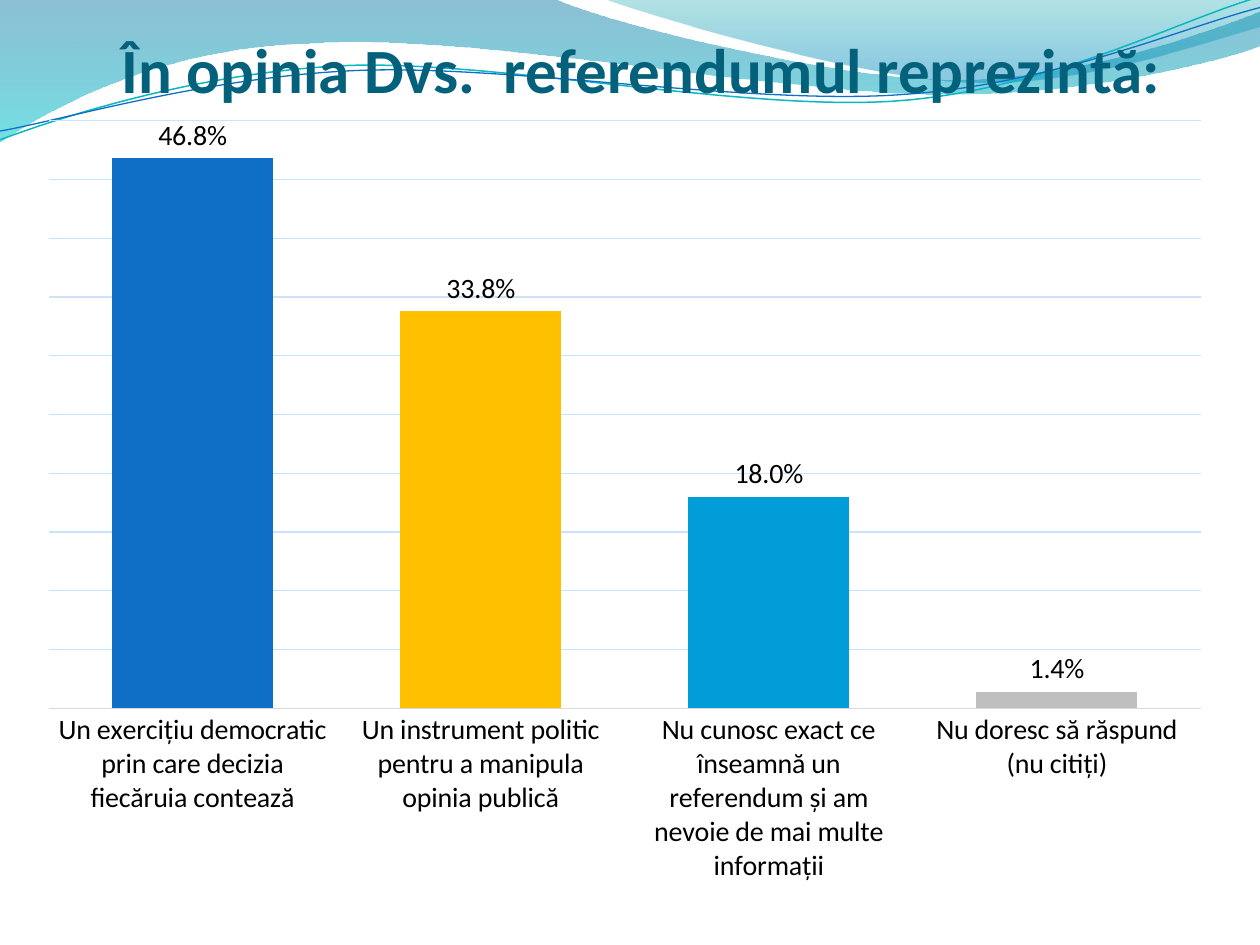
import math

import lxml.etree
import pptx
import pptx.chart.data
import pptx.dml.color
import pptx.enum.chart
import pptx.enum.text
import pptx.oxml.ns
import pptx.util

Pt = pptx.util.Pt
qn = pptx.oxml.ns.qn

# Content
TITLE = "În opinia Dvs.  referendumul reprezintă:"
ANSWERS = [  # category, share, bar colour
    ("Un exercițiu democratic prin care decizia fiecăruia contează", 0.468, "0F6FC6"),
    ("Un instrument politic pentru a manipula opinia publică", 0.338, "FFC000"),
    ("Nu cunosc exact ce înseamnă un referendum și am nevoie de mai multe informații",
     0.18, "009DD9"),
    ("Nu doresc să răspund (nu citiți)", 0.014, "BFBFBF"),
]
TITLE_FONT = {"name": "Calibri", "size": Pt(36), "bold": True}
CHART_FONT = {"name": "Calibri", "size": Pt(16)}
PLOT_AREA = {"x": 0.02, "y": 0.02, "w": 0.96, "h": 0.74}

# Outlines in slide points: one point is a line, three points are a Bezier curve
WAVES = [
    {"box": (-0.7, -0.7, 721.4, 82.1), "start": (0, 0),
     "stops": [(0, "0074A1", 45), (1, "00C6CF", 55)], "segments": [
        [(316.8, -0.7)],
        [(342.7, 12.2), (478.1, 45.4), (545.8, 45.4)],
        [(614.2, 45.4), (689.8, 18.7), (720, 6.5)],
        [(720.7, 25.9)],
        [(707.8, 31.7), (626.4, 54.7), (537.1, 54)],
        [(447.8, 54), (275, 20.2), (185, 24.5)],
        [(92.9, 25.9), (33.1, 59.8), (-0.7, 81.4)],
        [(0, 0)]]},
    {"box": (344.9, -0.7, 375.1, 50.4), "start": (344.9, -0.7),
     "stops": [(0, "00A1A9", 30), (0.8, "008BBF", 45)], "segments": [
        [(366.5, 7.9), (491, 44.6), (553.7, 46.8)],
        [(616.3, 49.7), (691.9, 23), (720, 15.1)],
        [(720, 0)],
        [(344.9, -0.7)]]},
    {"box": (-1.4, 15.8, 721.4, 51.1), "rotation": -2.7, "start": (0, 79.9),
     "line": ("0AB8BF", 0.85), "segments": [
        [(34.6, 67), (113.8, 41), (199.4, 37.4)],
        [(284.4, 34.6), (427, 64.1), (513.4, 57.6)],
        [(599.8, 51.1), (675.4, 10.8), (718.6, -1.4)]]},
    {"box": (-1.4, 21.6, 722.2, 41.8), "rotation": -2.7, "start": (0, 74.9),
     "line": ("0F6FC6", 0.75), "segments": [
        [(33.8, 69.1), (118.1, 43.9), (203.8, 40.3)],
        [(290.2, 36.7), (429.8, 60.5), (516.2, 54)],
        [(601.9, 48.2), (677.5, 15.1), (720, 4.3)]]},
]


def color(value):
    return pptx.dml.color.RGBColor.from_string(value)


def set_values(target, values):
    for name, value in values.items():
        setattr(target, name, value)


def set_font(font, values, value_color):
    set_values(font, values)
    font.color.rgb = color(value_color)


def set_line(line, value_color, width):
    line.color.rgb = color(value_color)
    line.width = Pt(width)


def to_local(point, box, rotation):
    """Place a slide point inside the unrotated box of its shape."""
    left, top, width, height = box
    x, y = point[0] - left - width / 2, point[1] - top - height / 2
    angle = math.radians(-rotation)
    return (Pt(x * math.cos(angle) - y * math.sin(angle) + width / 2),
            Pt(x * math.sin(angle) + y * math.cos(angle) + height / 2))


def draw_outline(shape, wave):
    """Write the lines and Bezier curves of a wave into its freeform."""
    box, rotation = wave["box"], wave.get("rotation", 0)
    set_values(shape, dict(zip(("left", "top", "width", "height"), map(Pt, box))))
    shape.rotation = rotation
    outline = shape._element.find(".//" + qn("a:path"))
    for command in list(outline):
        outline.remove(command)
    outline.set("w", str(shape.width))
    outline.set("h", str(shape.height))
    commands = [("a:moveTo", [wave["start"]])] + [
        ("a:lnTo" if len(segment) == 1 else "a:cubicBezTo", segment)
        for segment in wave["segments"]]
    for tag, points in commands:
        command = lxml.etree.SubElement(outline, qn(tag))
        for point in points:
            x, y = to_local(point, box, rotation)
            lxml.etree.SubElement(command, qn("a:pt"), x=str(x), y=str(y))
    if "stops" in wave:
        lxml.etree.SubElement(outline, qn("a:close"))


def add_wave(slide, wave):
    left, top, width, height = map(Pt, wave["box"])
    builder = slide.shapes.build_freeform(left, top)
    builder.add_line_segments([(left + width, top + height)], close=False)
    shape = builder.convert_to_shape()
    draw_outline(shape, wave)
    shape.shadow.inherit = False
    if "line" in wave:
        shape.fill.background()
        set_line(shape.line, *wave["line"])
        return
    shape.line.fill.background()
    shape.fill.gradient()
    shape.fill.gradient_angle = 270
    for stop, (position, value, _) in zip(shape.fill.gradient_stops, wave["stops"]):
        stop.position = position
        stop.color.rgb = color(value)
    # Opacity of each gradient stop
    stop_colors = shape.fill._xPr.iter(qn("a:srgbClr"))
    for stop_color, (_, _, opacity) in zip(stop_colors, wave["stops"]):
        lxml.etree.SubElement(stop_color, qn("a:alpha"), val=str(opacity * 1000))


def add_title(slide):
    shape = slide.shapes.add_textbox(Pt(42.5), Pt(9.4), Pt(648), Pt(51))
    frame = shape.text_frame
    set_values(frame, {
        "word_wrap": True, "vertical_anchor": pptx.enum.text.MSO_ANCHOR.BOTTOM,
        "margin_left": 0, "margin_right": 0, "margin_top": Pt(3.6), "margin_bottom": 0})
    paragraph = frame.paragraphs[0]
    paragraph.alignment = pptx.enum.text.PP_ALIGN.CENTER
    run = paragraph.add_run()
    run.text = TITLE
    set_font(run.font, TITLE_FONT, "04617B")


def add_answer_chart(slide):
    categories, shares, bar_colors = zip(*ANSWERS)
    data = pptx.chart.data.CategoryChartData(number_format="0.0%")
    data.categories = categories
    data.add_series("Series 1", shares)
    chart = slide.shapes.add_chart(
        pptx.enum.chart.XL_CHART_TYPE.COLUMN_CLUSTERED,
        Pt(14), Pt(60), Pt(686), Pt(453.6), data).chart
    set_values(chart, {"has_title": False, "has_legend": False})
    set_font(chart.font, CHART_FONT, "000000")

    # Bars and labels
    plot = chart.plots[0]
    set_values(plot, {"gap_width": 79, "overlap": -27, "vary_by_categories": False})
    series = plot.series[0]
    set_values(series.data_labels, {
        "show_value": True, "number_format": "0.0%", "number_format_is_linked": False,
        "position": pptx.enum.chart.XL_LABEL_POSITION.OUTSIDE_END})
    set_font(series.data_labels.font, CHART_FONT, "000000")
    bars = [series] + [series.points[index] for index in range(1, len(ANSWERS))]
    for bar, value in zip(bars, bar_colors):
        bar.format.fill.solid()
        bar.format.fill.fore_color.rgb = color(value)

    # Axes
    chart.category_axis.major_tick_mark = pptx.enum.chart.XL_TICK_MARK.NONE
    set_font(chart.category_axis.tick_labels.font, CHART_FONT, "000000")
    set_line(chart.category_axis.format.line, "D9D9D9", 0.75)
    set_values(chart.value_axis, {
        "minimum_scale": 0, "maximum_scale": 0.5, "major_unit": 0.05,
        "has_major_gridlines": True, "visible": False})
    set_values(chart.value_axis.tick_labels, {
        "number_format": "0.0%", "number_format_is_linked": False})
    set_line(chart.value_axis.major_gridlines.format.line, "C8E3FB", 0.75)

    # Fixed inner plot area
    plot_area = chart._chartSpace.find(".//" + qn("c:plotArea"))
    layout = plot_area.find(qn("c:layout"))
    if layout is None:
        layout = lxml.etree.Element(qn("c:layout"))
        plot_area.insert(0, layout)
    manual = lxml.etree.SubElement(layout, qn("c:manualLayout"))
    settings = {"layoutTarget": "inner", "xMode": "edge", "yMode": "edge", **PLOT_AREA}
    for name, value in settings.items():
        lxml.etree.SubElement(manual, qn("c:" + name), val=str(value))


def main():
    presentation = pptx.Presentation()
    set_values(presentation, {"slide_width": Pt(720), "slide_height": Pt(540)})
    slide = presentation.slides.add_slide(presentation.slide_layouts[6])
    for wave in WAVES:
        add_wave(slide, wave)
    add_title(slide)
    add_answer_chart(slide)
    presentation.save("out.pptx")


if __name__ == "__main__":
    main()
